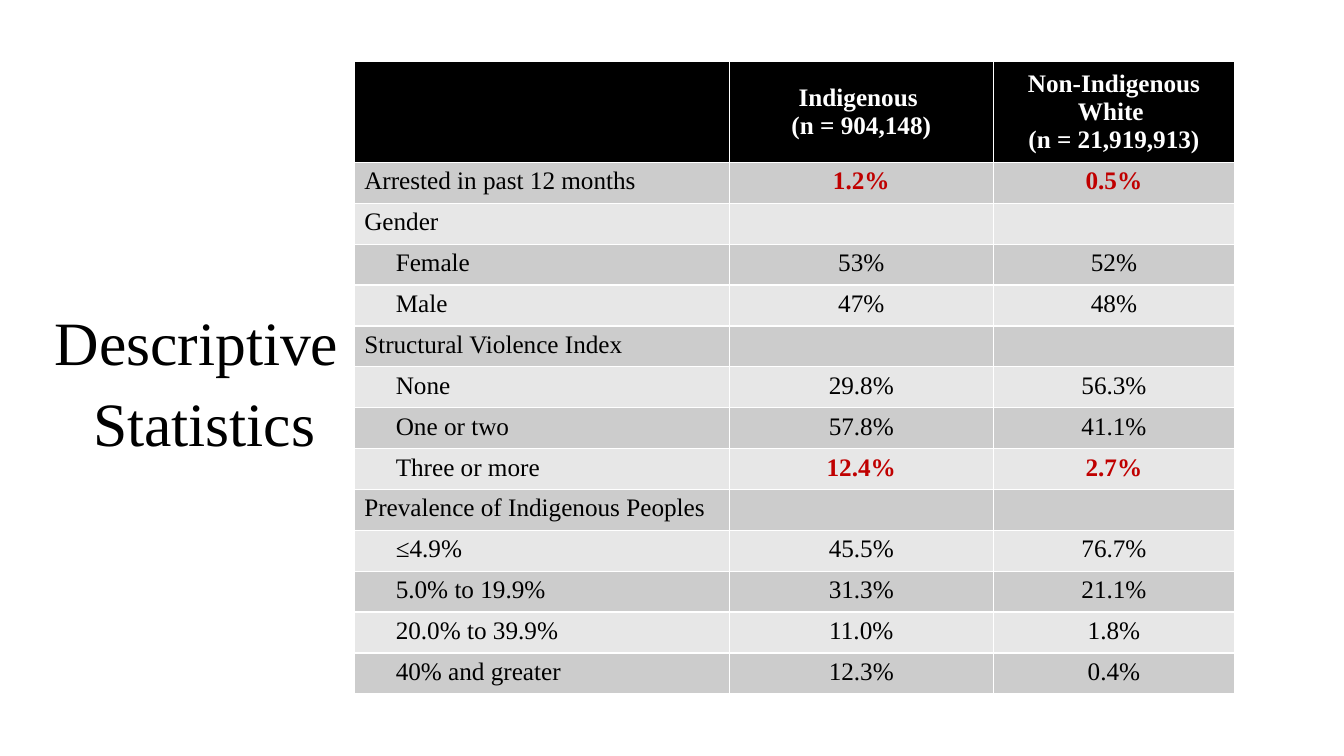
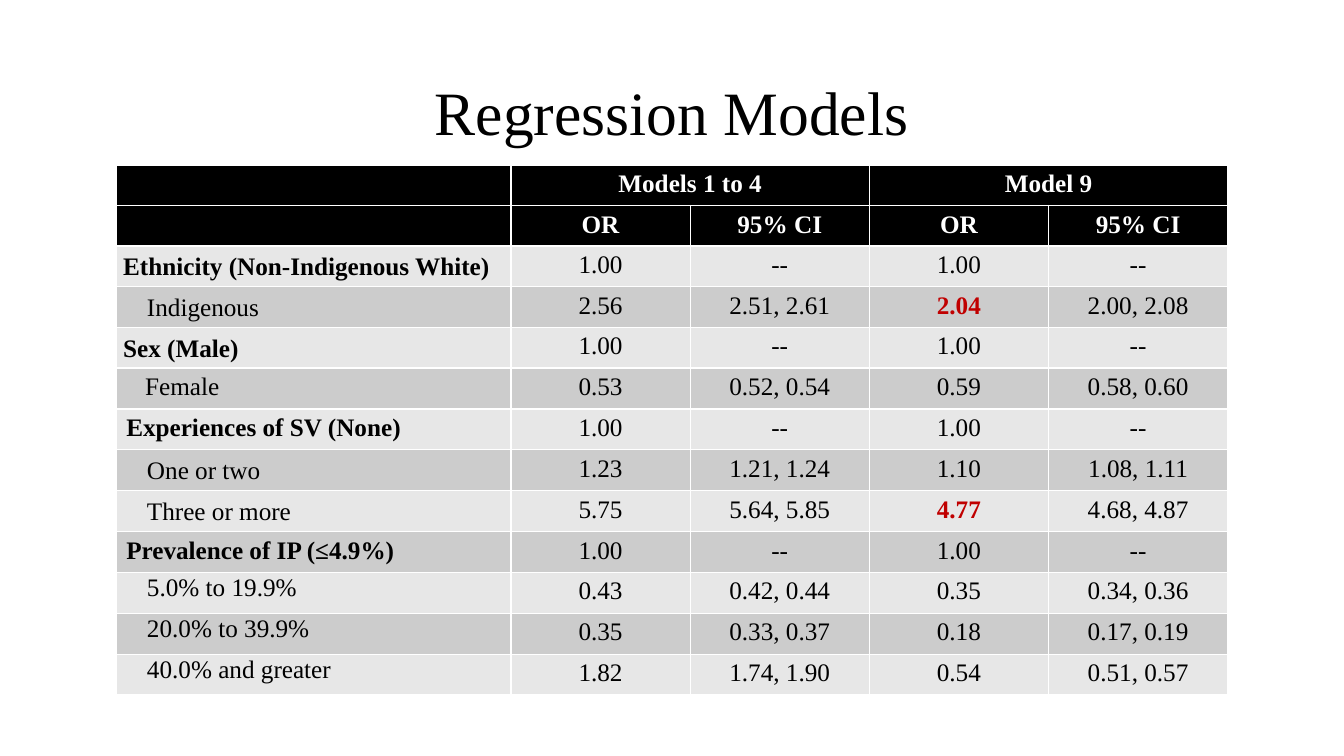
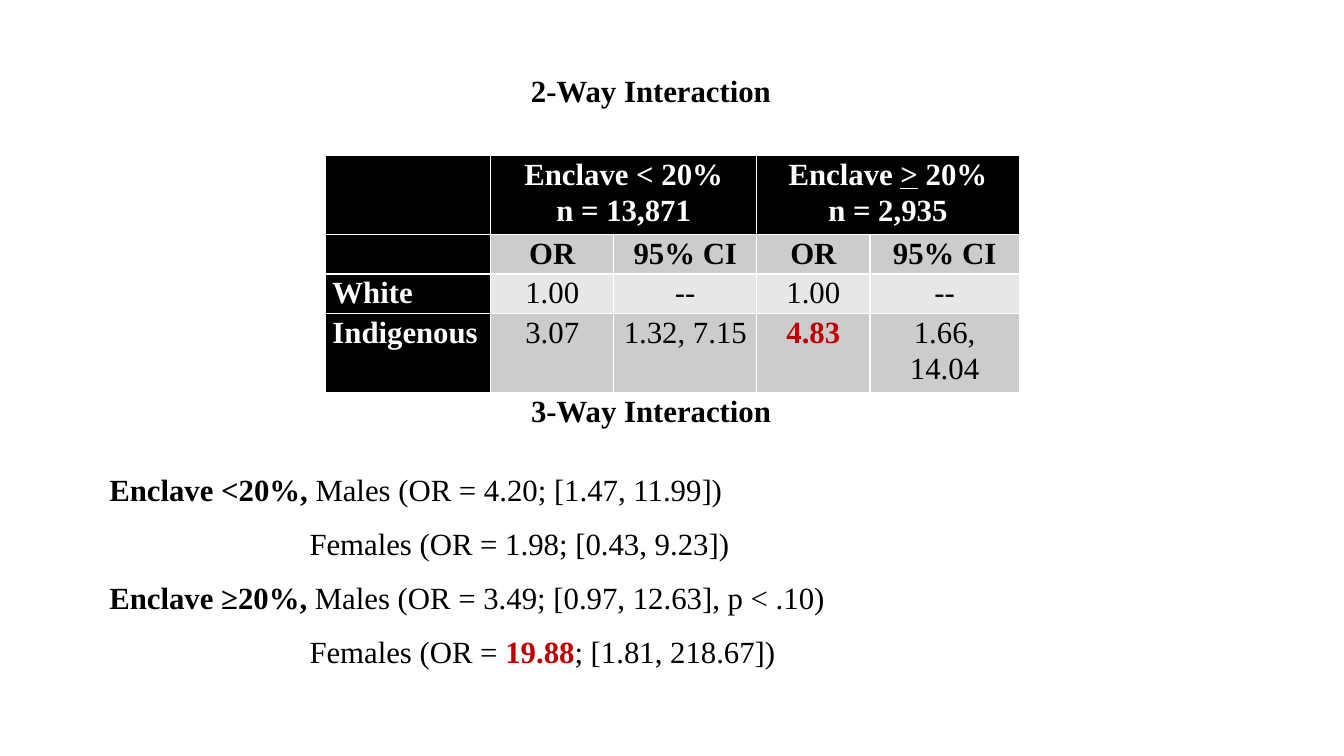
from pptx import Presentation
from pptx.dml.color import RGBColor
from pptx.enum import text as t
from pptx.util import Pt

BLACK = RGBColor(0x00, 0x00, 0x00)
WHITE = RGBColor(0xFF, 0xFF, 0xFF)
RED = RGBColor(0xC0, 0x00, 0x00)
DARK_BAND = RGBColor(0xCC, 0xCC, 0xCC)
LIGHT_BAND = RGBColor(0xE7, 0xE7, 0xE7)
FONT = "Times New Roman"
LEFT, CENTER = t.PP_ALIGN.LEFT, t.PP_ALIGN.CENTER
TOP, MIDDLE = t.MSO_ANCHOR.TOP, t.MSO_ANCHOR.MIDDLE


def format_paragraph(p, size, color=BLACK, bold=False, align=LEFT, spacing=None, indent=0):
    if indent:
        p._p.get_or_add_pPr().set("marL", str(Pt(indent)))
    p.alignment = align
    if spacing:
        p.line_spacing = spacing
    p.font.name = FONT
    p.font.size = Pt(size)
    p.font.bold = bold
    p.font.color.rgb = color


def add_text_box(slide, left, top, width, height, anchor=TOP):
    box = slide.shapes.add_textbox(Pt(left), Pt(top), Pt(width), Pt(height))
    tf = box.text_frame
    tf.word_wrap = True
    tf.vertical_anchor = anchor
    return tf


def add_title(slide, text, left, top, width, height, anchor=TOP):
    tf = add_text_box(slide, left, top, width, height, anchor)
    tf.text = text
    for p in tf.paragraphs:
        format_paragraph(p, 44, align=CENTER, spacing=1.1)


def fill_cell(cell, text, fill, size=18, color=BLACK, bold=False, align=CENTER,
              spacing=None, indent=0, tight=False, anchor=TOP):
    cell.fill.solid()
    cell.fill.fore_color.rgb = fill
    cell.vertical_anchor = anchor
    if tight:
        cell.margin_left = cell.margin_right = Pt(5)
        cell.margin_top = cell.margin_bottom = 0
    cell.text_frame.text = text
    for p in cell.text_frame.paragraphs:
        format_paragraph(p, size, color, bold, align, spacing, indent)


def add_grid(slide, left, top, widths, heights):
    frame = slide.shapes.add_table(len(heights), len(widths), Pt(left), Pt(top),
                                   Pt(sum(widths)), Pt(sum(heights)))
    table = frame.table
    for column, width in zip(table.columns, widths):
        column.width = Pt(width)
    for row, height in zip(table.rows, heights):
        row.height = Pt(height)
    return table


def merge_header_pairs(table):
    for col in (1, 3):
        table.cell(0, col).merge(table.cell(0, col + 1))


def fill_values(table, row, values, fill, red, **style):
    for col, value in enumerate(values, 1):
        marked = (row, col) in red
        fill_cell(table.cell(row, col), value, fill, color=RED if marked else BLACK,
                  bold=marked, **style)


def band(row):
    return DARK_BAND if row % 2 else LIGHT_BAND


def descriptive_table(slide, left, top):
    header = ("", "Indigenous \n(n = 904,148)", "Non-Indigenous White \n(n = 21,919,913)")
    rows = [
        (0, "Arrested in past 12 months", "1.2%", "0.5%"),
        (0, "Gender", "", ""),
        (1, "Female", "53%", "52%"),
        (1, "Male", "47%", "48%"),
        (0, "Structural Violence Index", "", ""),
        (1, "None", "29.8%", "56.3%"),
        (1, "One or two", "57.8%", "41.1%"),
        (1, "Three or more", "12.4%", "2.7%"),
        (0, "Prevalence of Indigenous Peoples", "", ""),
        (1, "≤4.9%", "45.5%", "76.7%"),
        (1, "5.0% to 19.9%", "31.3%", "21.1%"),
        (1, "20.0% to 39.9%", "11.0%", "1.8%"),
        (1, "40% and greater", "12.3%", "0.4%"),
    ]
    red = {(1, 1), (1, 2), (8, 1), (8, 2)}
    table = add_grid(slide, left, top, (268, 188.5, 172.5), [66] + [29.2] * len(rows))
    for col, text in enumerate(header):
        fill_cell(table.cell(0, col), text, BLACK, color=WHITE, bold=True, anchor=MIDDLE)
    for row, (level, label, *values) in enumerate(rows, 1):
        fill_cell(table.cell(row, 0), label, band(row), align=LEFT, indent=22.5 * level)
        fill_values(table, row, values, band(row), red)


def regression_table(slide, left, top):
    group = dict(bold=True)
    tight_group = dict(bold=True, tight=True, anchor=MIDDLE, spacing=1.07)
    item = dict(indent=13.5)
    tight_item = dict(indent=17, tight=True, spacing=1.07)
    middle_item = dict(tight_item, anchor=MIDDLE)
    reference = ("1.00", "--", "1.00", "--")
    headers = [
        ("", "Models 1 to 4", "", "Model 9", ""),
        ("", "OR", "95% CI", "OR", "95% CI"),
    ]
    rows = [
        (tight_group, "Ethnicity (Non-Indigenous White)", *reference),
        (middle_item, "Indigenous", "2.56", "2.51, 2.61", "2.04", "2.00, 2.08"),
        (tight_group, "Sex (Male)", *reference),
        (item, "Female", "0.53", "0.52, 0.54", "0.59", "0.58, 0.60"),
        (group, "Experiences of SV (None)", *reference),
        (middle_item, "One or two", "1.23", "1.21, 1.24", "1.10", "1.08, 1.11"),
        (middle_item, "Three or more", "5.75", "5.64, 5.85", "4.77", "4.68, 4.87"),
        (group, "Prevalence of IP (≤4.9%)", *reference),
        (tight_item, "5.0% to 19.9%", "0.43", "0.42, 0.44", "0.35", "0.34, 0.36"),
        (tight_item, "20.0% to 39.9%", "0.35", "0.33, 0.37", "0.18", "0.17, 0.19"),
        (tight_item, "40.0% and greater", "1.82", "1.74, 1.90", "0.54", "0.51, 0.57"),
    ]
    red = {(3, 3), (8, 3)}
    heights = [27.1, 27.1, 29.2, 27.1] + [29.2] * 9
    table = add_grid(slide, left, top, [282] + [128] * 4, heights)
    for row, header in enumerate(headers):
        for col, text in enumerate(header):
            fill_cell(table.cell(row, col), text, BLACK, color=WHITE, bold=True)
    merge_header_pairs(table)
    for row, (style, label, *values) in enumerate(rows, 2):
        fill_cell(table.cell(row, 0), label, band(row), align=LEFT, **style)
        fill_values(table, row, values, band(row), red)


def interaction_table(slide, left, top):
    style = dict(size=22, spacing=1.07, tight=True)
    header = ("", "Enclave < 20%\nn = 13,871", "", "Enclave \nn = 2,935", "")
    rows = [
        ("White", "1.00", "--", "1.00", "--"),
        ("Indigenous", "3.07", "1.32, 7.15", "4.83", "1.66, 14.04"),
    ]
    table = add_grid(slide, left, top, (118, 88, 102, 81, 106.5), (52, 26, 26, 52))
    for col, text in enumerate(header):
        fill_cell(table.cell(0, col), text, BLACK, color=WHITE, bold=True, **style)
    merge_header_pairs(table)
    p = table.cell(0, 3).text_frame.paragraphs[0]
    for text, underline in ((">", True), (" 20%", False)):
        r = p.add_run()
        r.text = text
        r.font.underline = underline
    fill_cell(table.cell(1, 0), "", BLACK, **style)
    for col, text in enumerate(("OR", "95% CI") * 2, 1):
        fill_cell(table.cell(1, col), text, DARK_BAND, bold=True, **style)
    for row, (label, *values) in enumerate(rows, 2):
        fill_cell(table.cell(row, 0), label, BLACK, color=WHITE, bold=True, align=LEFT, **style)
        fill_values(table, row, values, band(row), {(3, 3)}, **style)


def three_way_results(slide, left, top, width, height):
    lines = [
        (0, ("Enclave <20%, ", BLACK, True), ("Males (OR = 4.20; [1.47, 11.99])", BLACK, False)),
        (143, ("Females (OR = 1.98; [0.43, 9.23])", BLACK, False)),
        (0, ("Enclave ≥20%, ", BLACK, True),
         ("Males (OR = 3.49; [0.97, 12.63], p < .10)", BLACK, False)),
        (143, ("Females (OR = ", BLACK, False), ("19.88", RED, True),
         ("; [1.81, 218.67])", BLACK, False)),
    ]
    tf = add_text_box(slide, left, top, width, height)
    p = tf.paragraphs[0]
    p.text = "3-Way Interaction"
    format_paragraph(p, 22, bold=True, align=CENTER)
    p.space_after = Pt(28)
    for indent, *parts in lines:
        p = tf.add_paragraph()
        format_paragraph(p, 22, spacing=1.07, indent=indent)
        p.space_after = Pt(10.4)
        for text, color, bold in parts:
            r = p.add_run()
            r.text = text
            r.font.bold = bold
            r.font.color.rgb = color


def descriptive_slide(slide):
    add_title(slide, "Descriptive \nStatistics", 0, 212, 292, 116, MIDDLE)
    descriptive_table(slide, 253, 44)


def regression_slide(slide):
    regression_table(slide, 83, 118)
    add_title(slide, "Regression Models", 102, 44, 756, 103)


def interaction_slide(slide):
    interaction_table(slide, 232.5, 111)
    tf = add_text_box(slide, 367, 48, 196, 34)
    tf.text = "2-Way Interaction"
    format_paragraph(tf.paragraphs[0], 22, bold=True, align=CENTER)
    three_way_results(slide, 71, 276.5, 788, 234)


def main():
    prs = Presentation()
    prs.slide_width, prs.slide_height = Pt(960), Pt(540)
    for build in (descriptive_slide, regression_slide, interaction_slide):
        build(prs.slides.add_slide(prs.slide_layouts[6]))
    prs.save("out.pptx")


if __name__ == "__main__":
    main()
